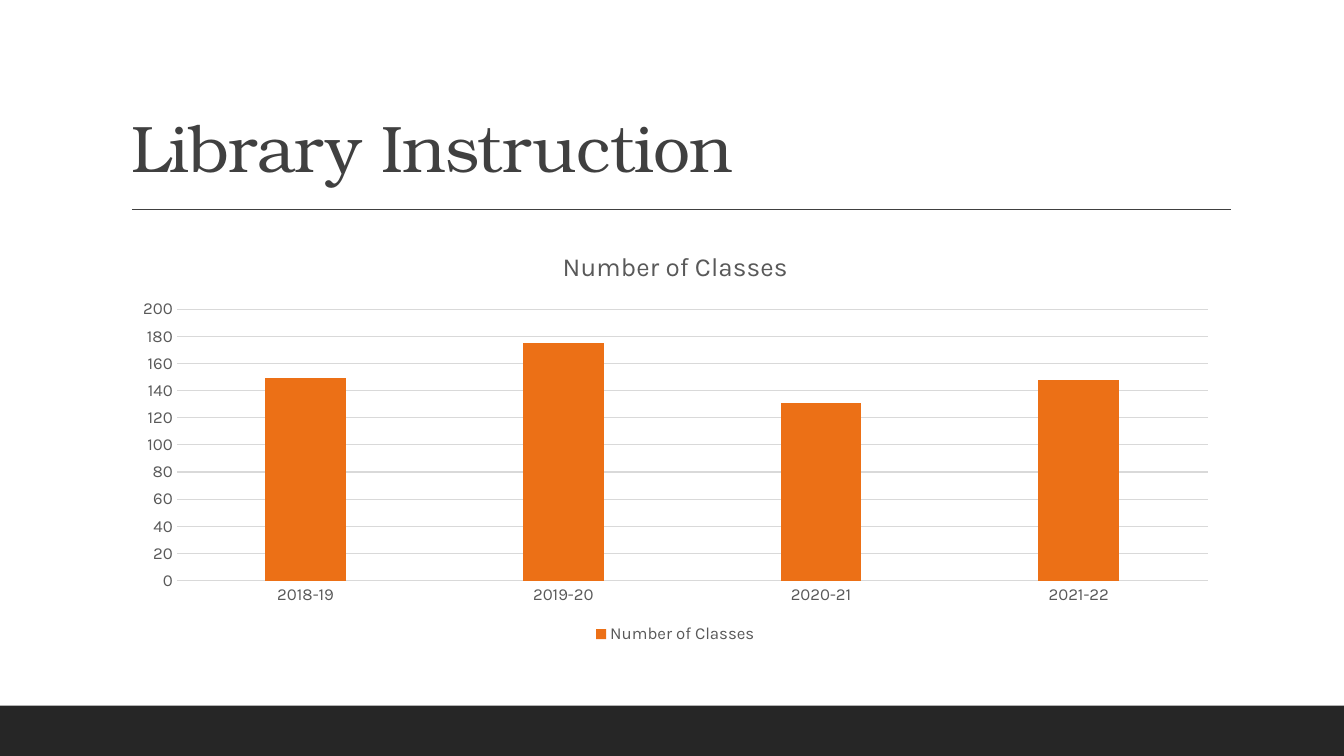
"""Build the library instruction slide with its column chart."""
from dataclasses import dataclass

from lxml import etree
from pptx import Presentation
from pptx.chart.data import CategoryChartData
from pptx.dml.color import RGBColor
from pptx.enum import chart as ch, shapes, text
from pptx.oxml import ns
from pptx.util import Pt


@dataclass(frozen=True)
class Theme:
    """Hold the colours, fonts and type sizes."""
    head: str = "TeX Gyre Bonum"
    body: str = "Karla"
    paper: str = "FFFFFF"
    ink: str = "404040"
    band: str = "262626"
    grey: str = "595959"
    grid: str = "D9D9D9"
    bar: str = "EC7016"
    title: float = 47
    label: float = 12
    name: float = 18.6


THEME = Theme()
WIDTH, HEIGHT = 960, 540
YEARS = ["2018-19", "2019-20", "2020-21", "2021-22"]
COUNTS = [149, 175, 131, 148]


def paint(fill, color):
    """Give a fill one solid colour."""
    fill.solid()
    fill.fore_color.rgb = RGBColor.from_string(color)


def style(font, face, size, color):
    """Set the face, size and colour of a font."""
    font.name, font.size, font.bold = face, Pt(size), False
    font.color.rgb = RGBColor.from_string(color)


def stroke(line, color, width):
    """Set the colour and width of a line."""
    line.color.rgb = RGBColor.from_string(color)
    line.width = Pt(width)


def add_title(slide, words, box):
    """Move the title placeholder and fill it."""
    title = slide.shapes.title
    title.left, title.top, title.width, title.height = map(Pt, box)
    frame = title.text_frame
    frame.word_wrap = True
    frame.auto_size = text.MSO_AUTO_SIZE.NONE
    frame.vertical_anchor = text.MSO_ANCHOR.BOTTOM
    para = frame.paragraphs[0]
    para.alignment = text.PP_ALIGN.LEFT
    para.line_spacing = 0.9
    run = para.add_run()
    run.text = words
    style(run.font, THEME.head, THEME.title, THEME.ink)
    run.font._element.set("spc", "-50")


def add_rule(slide, left, right, top):
    """Draw a flat line across the slide."""
    rule = slide.shapes.add_connector(
        shapes.MSO_CONNECTOR.STRAIGHT, Pt(left), Pt(top), Pt(right), Pt(top))
    stroke(rule.line, THEME.ink, 1)
    etree.SubElement(rule._element.spPr, ns.qn("a:effectLst"))


def add_band(slide, box, color):
    """Draw a plain filled band."""
    band = slide.shapes.add_shape(
        shapes.MSO_SHAPE.RECTANGLE, *map(Pt, box))
    band.shadow.inherit = False
    paint(band.fill, color)
    band.line.fill.background()


def style_axis(axis):
    """Set the labels and ticks of an axis."""
    axis.major_tick_mark = axis.minor_tick_mark = ch.XL_TICK_MARK.NONE
    style(axis.tick_labels.font, THEME.body, THEME.label, THEME.grey)


def add_columns(slide, name, cats, vals, box):
    """Add a column chart with a title and a legend."""
    data = CategoryChartData()
    data.categories = cats
    data.add_series(name, vals)
    chart = slide.shapes.add_chart(
        ch.XL_CHART_TYPE.COLUMN_CLUSTERED, *map(Pt, box), data).chart
    chart.font.name = THEME.body

    chart.has_title = True
    run = chart.chart_title.text_frame.paragraphs[0].add_run()
    run.text = name
    style(run.font, THEME.body, THEME.name, THEME.grey)
    chart.chart_title.include_in_layout = False

    chart.has_legend = True
    chart.legend.position = ch.XL_LEGEND_POSITION.BOTTOM
    chart.legend.include_in_layout = False
    style(chart.legend.font, THEME.body, THEME.label, THEME.grey)

    plot = chart.plots[0]
    plot.vary_by_categories = False
    plot.gap_width, plot.overlap = 219, -27
    paint(plot.series[0].format.fill, THEME.bar)

    style_axis(chart.category_axis)
    stroke(chart.category_axis.format.line, THEME.grid, 0.75)
    axis = chart.value_axis
    style_axis(axis)
    axis.minimum_scale, axis.maximum_scale, axis.major_unit = 0, 200, 20
    axis.format.line.fill.background()
    axis.has_major_gridlines = True
    stroke(axis.major_gridlines.format.line, THEME.grid, 0.75)


def main():
    """Build and save the slide."""
    deck = Presentation()
    deck.slide_width, deck.slide_height = Pt(WIDTH), Pt(HEIGHT)
    slide = deck.slides.add_slide(deck.slide_layouts.get_by_name("Title Only"))
    paint(slide.background.fill, THEME.paper)
    add_title(slide, "Library Instruction", (86.4, 22.5, 792, 114.3))
    add_rule(slide, 94.2, 879, 149.5)
    add_band(slide, (0, 504, WIDTH, 36), THEME.band)
    add_columns(slide, "Number of Classes", YEARS, COUNTS,
                (86.4, 165, 792, 298))
    deck.save("out.pptx")


if __name__ == "__main__":
    main()
